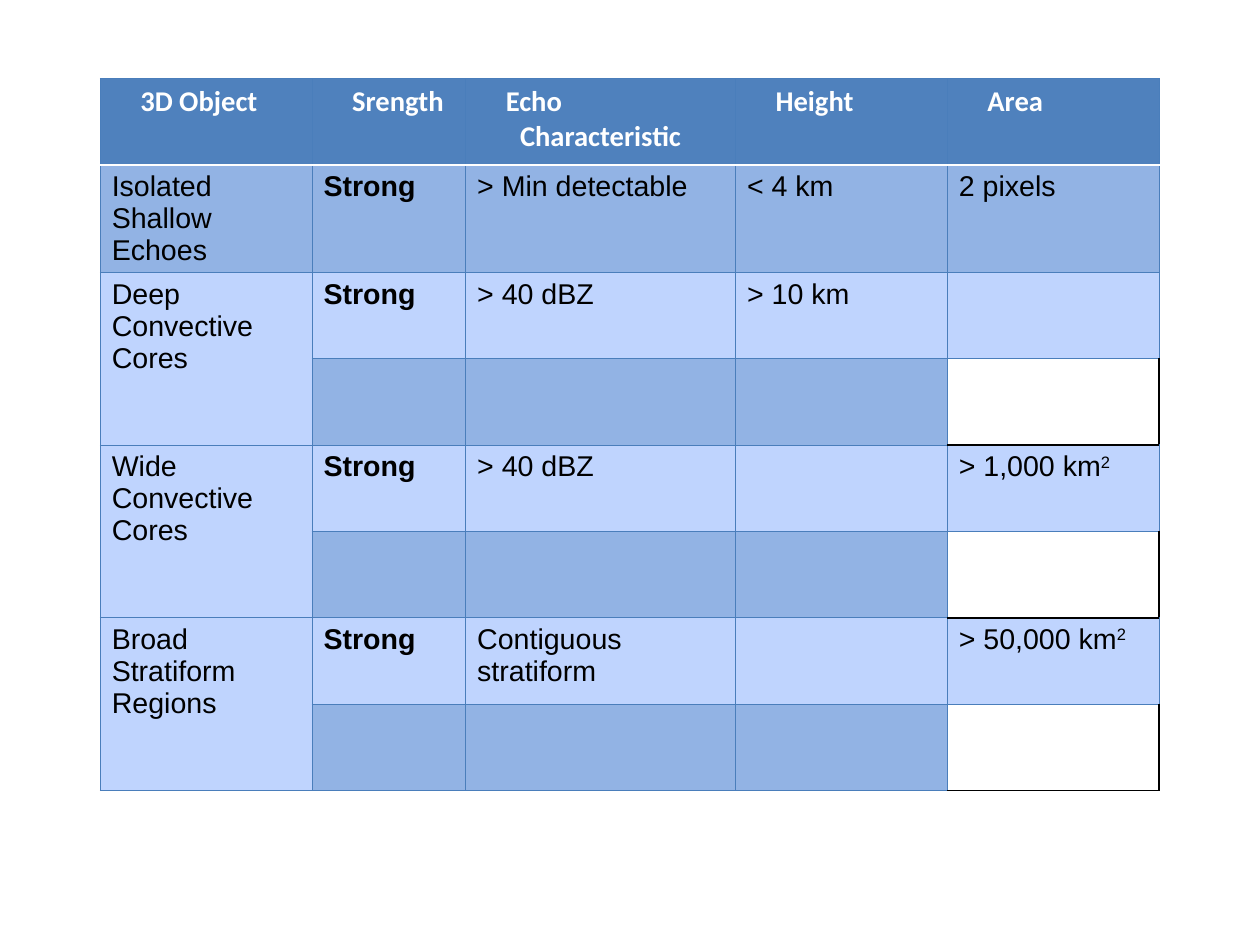
"""Build the slide with the table of 3D radar echo objects."""
from lxml import etree
from pptx import Presentation
from pptx.dml.color import RGBColor
from pptx.oxml import ns
from pptx.util import Pt

HEADINGS = ["3D Object", "Srength", "Echo Characteristic", "Height", "Area"]
OBJECTS = [
    ("Isolated Shallow Echoes", "Strong", "> Min detectable", "< 4 km", "2 pixels"),
    ("Deep Convective Cores", "Strong", "> 40 dBZ", "> 10 km", ""),
    ("Wide Convective Cores", "Strong", "> 40 dBZ", "", "> 1,000 km^2"),
    ("Broad Stratiform Regions", "Strong", "Contiguous\vstratiform", "", "> 50,000 km^2"),
]
SLIDE_WIDTH, SLIDE_HEIGHT = 793.7, 595.28
COLUMN_WIDTHS = [133.4, 96.8, 170, 133.4, 133.4]
ROW_HEIGHTS = [54.4, 67.6] + [54.4] * 6
LEFT, TOP = 63.2, 49.5
STRENGTH, AREA = 1, 4
NO_STYLE = "{2D5ABB26-0587-4C30-8999-92F81FD0307C}"

WHITE = RGBColor(0xFF, 0xFF, 0xFF)
BLACK = RGBColor(0, 0, 0)
HEADER_BLUE = RGBColor(0x4F, 0x81, 0xBD)
DARK_BAND = RGBColor(0x92, 0xB3, 0xE4)
LIGHT_BAND = RGBColor(0xBF, 0xD4, 0xFE)
GRID_BLUE = RGBColor(0x4A, 0x7E, 0xBB)

GRID = (GRID_BLUE, 0.75)
HEADER_RULE = (WHITE, 1.98)
OPEN_RULE = (BLACK, 1.25)
HEADING_FORMAT = {"name": "Calibri", "size": Pt(18), "bold": True}
BODY_FORMAT = {"name": "Arial", "size": Pt(18), "bold": False}


def is_open(row, column):
    return column == AREA and row > 1 and row % 2 == 1


def borders(row, column):
    sides = dict.fromkeys(("lnL", "lnR", "lnT", "lnB"), GRID)
    if row == 0:
        sides["lnB"] = HEADER_RULE
    elif row == 1:
        sides["lnT"] = HEADER_RULE
    elif is_open(row, column):
        sides["lnR"] = sides["lnB"] = OPEN_RULE
    elif is_open(row - 1, column):
        sides["lnT"] = OPEN_RULE
    return sides


def draw_borders(cell, sides):
    properties = cell._tc.get_or_add_tcPr()
    for position, (side, (color, width)) in enumerate(sides.items()):
        line = etree.Element(ns.qn(f"a:{side}"), w=str(Pt(width)))
        solid = etree.SubElement(line, ns.qn("a:solidFill"))
        etree.SubElement(solid, ns.qn("a:srgbClr"), val=str(color))
        properties.insert(position, line)


def paint(cell, row, column):
    if is_open(row, column):
        cell.fill.background()
        return
    cell.fill.solid()
    covered = column == 0 and row > 1
    band = DARK_BAND if row % 2 and not covered else LIGHT_BAND
    cell.fill.fore_color.rgb = band if row else HEADER_BLUE


def write(cell, wording, formats, color):
    paragraph = cell.text_frame.paragraphs[0]
    base, _, exponent = wording.partition("^")
    paragraph.text = base
    if exponent:
        raised = paragraph.add_run()
        raised.text = exponent
        raised._r.get_or_add_rPr().set("baseline", "30000")
    for run in paragraph.runs:
        for attribute, value in formats.items():
            setattr(run.font, attribute, value)
        run.font.color.rgb = color
    return paragraph


def main():
    deck = Presentation()
    deck.slide_width, deck.slide_height = Pt(SLIDE_WIDTH), Pt(SLIDE_HEIGHT)
    slide = deck.slides.add_slide(deck.slide_layouts[6])
    frame = slide.shapes.add_table(
        len(ROW_HEIGHTS), len(COLUMN_WIDTHS), Pt(LEFT), Pt(TOP),
        Pt(sum(COLUMN_WIDTHS)), Pt(sum(ROW_HEIGHTS)))
    echoes = frame.table
    echoes.first_row = echoes.horz_banding = False
    echoes._tbl.tblPr.find(ns.qn("a:tableStyleId")).text = NO_STYLE

    for column, width in zip(echoes.columns, COLUMN_WIDTHS):
        column.width = Pt(width)
    for row, height in zip(echoes.rows, ROW_HEIGHTS):
        row.height = Pt(height)
    for row in range(len(ROW_HEIGHTS)):
        for column in range(len(COLUMN_WIDTHS)):
            cell = echoes.cell(row, column)
            paint(cell, row, column)
            draw_borders(cell, borders(row, column))

    for column, heading in enumerate(HEADINGS):
        paragraph = write(echoes.cell(0, column), heading, HEADING_FORMAT, WHITE)
        indents = paragraph._p.get_or_add_pPr()
        indents.set("marL", str(Pt(27)))
        indents.set("indent", str(Pt(-9)))

    for index, wordings in enumerate(OBJECTS):
        row = max(1, 2 * index)
        if index:
            echoes.cell(row, 0).merge(echoes.cell(row + 1, 0))
        for column, wording in enumerate(wordings):
            if wording:
                formats = {**BODY_FORMAT, "bold": column == STRENGTH}
                write(echoes.cell(row, column), wording, formats, BLACK)

    deck.save("out.pptx")


if __name__ == "__main__":
    main()
